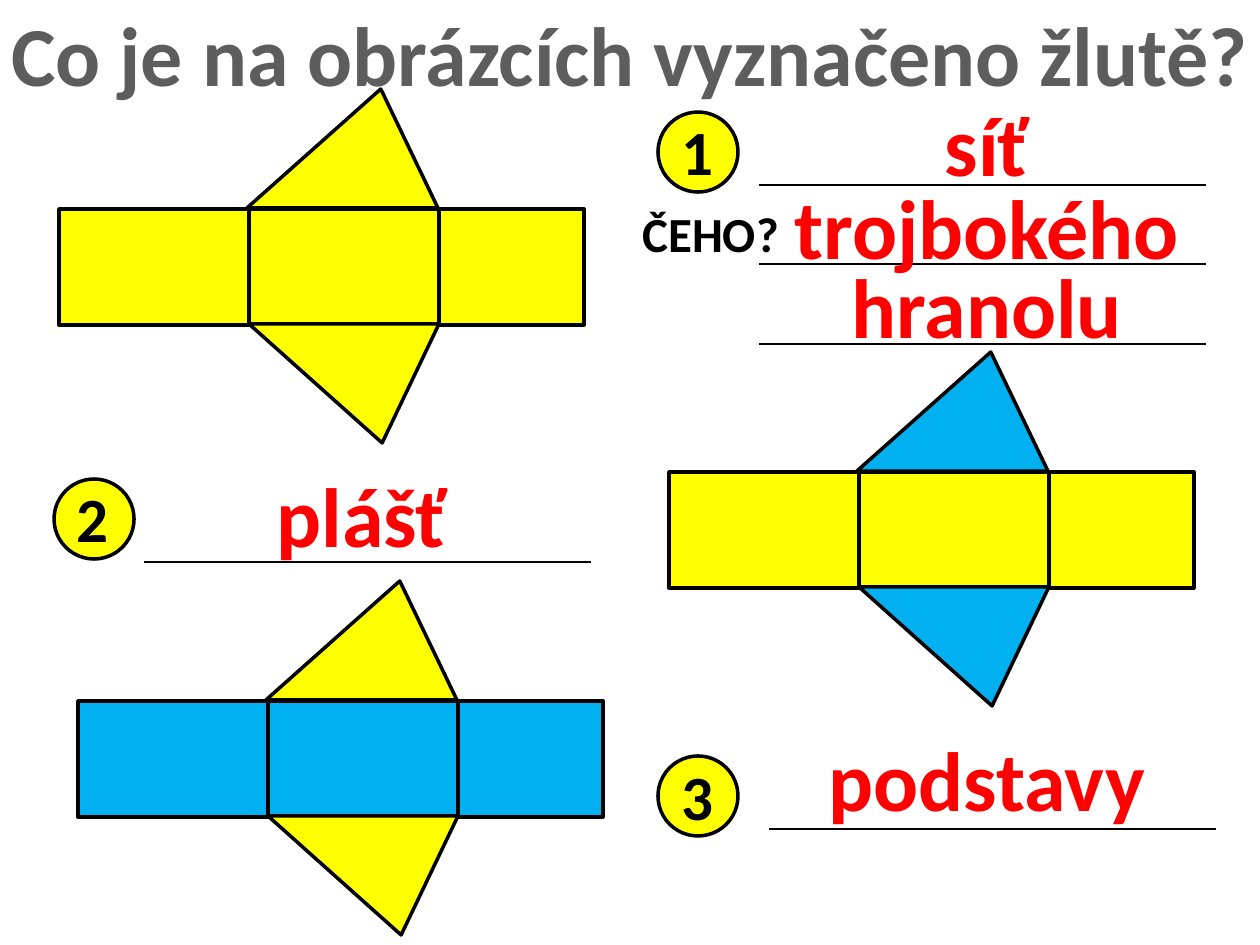
from lxml.etree import SubElement
from pptx import Presentation
from pptx.dml.color import RGBColor
from pptx.enum.shapes import MSO_CONNECTOR, MSO_SHAPE
from pptx.enum.text import MSO_AUTO_SIZE, PP_ALIGN
from pptx.oxml.ns import qn
from pptx.util import Emu, Pt

YELLOW = RGBColor(0xFF, 0xFF, 0x00)
BLUE = RGBColor(0x00, 0xB0, 0xF0)
RED = RGBColor(0xFF, 0x00, 0x00)
BLACK = RGBColor(0x00, 0x00, 0x00)
GREY = RGBColor(0x5D, 0x5D, 0x5D)

TITLE = "Co je na obrázcích vyznačeno žlutě?"
QUESTION = "ČEHO?"
NETS = [(59, 209, YELLOW, YELLOW), (669, 472, YELLOW, BLUE), (78, 701, BLUE, YELLOW)]
NET_SIDES = [(322, 203), (0, 266), (190, 190)]
SIDE_HEIGHT = 116
NET_BASES = [(188, -120, 191, False), (190, 115, 190, True)]
BASE_HEIGHT = 119
APEX = 0.701
NUMBERS = [("1", 658, 112, 669, 106), ("2", 54, 479, 64, 473), ("3", 658, 756, 669, 751)]
DISC = 80
ANSWER_LINES = [(759, 185), (759, 264), (759, 344), (144, 562), (769, 829)]
LINE_LENGTH = 447
ANSWERS = [("síť", 759, 86), ("trojbokého", 759, 169), ("hranolu", 759, 248),
           ("plášť", 134, 457), ("podstavy", 759, 721)]


def px(length):
    return Emu(round(length * 914400 / 126))


def add_text(page, text, left, top, width, height, *, size, color=BLACK,
             align=PP_ALIGN.LEFT, wrap=True):
    box = page.shapes.add_textbox(px(left), px(top), px(width), px(height))
    frame = box.text_frame
    frame.word_wrap = wrap
    frame.auto_size = MSO_AUTO_SIZE.SHAPE_TO_FIT_TEXT
    para = frame.paragraphs[0]
    para.alignment = align
    span = para.add_run()
    span.text = text
    span.font.name = "Calibri"
    span.font.size = Pt(size)
    span.font.bold = True
    span.font.color.rgb = color


def add_outlined(shapes, kind, left, top, width, height, color):
    shape = shapes.add_shape(kind, px(left), px(top), px(width), px(height))
    shape.shadow.inherit = False
    shape.fill.solid()
    shape.fill.fore_color.rgb = color
    shape.line.color.rgb = BLACK
    shape.line.width = Pt(2)
    return shape


def add_net(page, left, top, side_color, base_color):
    shapes = page.shapes.add_group_shape().shapes
    for x, width in NET_SIDES:
        add_outlined(shapes, MSO_SHAPE.RECTANGLE, left + x, top, width, SIDE_HEIGHT, side_color)
    for x, y, width, flipped in NET_BASES:
        base = add_outlined(shapes, MSO_SHAPE.ISOSCELES_TRIANGLE, left + x, top + y,
                            width, BASE_HEIGHT, base_color)
        base.adjustments[0] = APEX
        if flipped:
            base._element.spPr.xfrm.set("flipV", "1")


def add_answer_line(page, left, top):
    line = page.shapes.add_connector(MSO_CONNECTOR.STRAIGHT, px(left), px(top),
                                     px(left + LINE_LENGTH), px(top))
    line.line.color.rgb = BLACK
    line.line.width = Pt(1.5)
    SubElement(line._element.spPr, qn("a:effectLst"))


def main():
    """Build the slide on nets of a triangular prism."""
    deck = Presentation()
    deck.slide_width, deck.slide_height = px(1260), px(945)
    page = deck.slides.add_slide(deck.slide_layouts[6])
    add_text(page, TITLE, -8, -4, 1276, 115, size=48, color=GREY,
             align=PP_ALIGN.CENTER, wrap=False)
    for net in NETS:
        add_net(page, *net)
    for left, top in ANSWER_LINES:
        add_answer_line(page, left, top)
    for number, left, top, text_left, text_top in NUMBERS:
        add_outlined(page.shapes, MSO_SHAPE.OVAL, left, top, DISC, DISC, YELLOW)
        add_text(page, number, text_left, text_top, DISC, 89, size=36)
    for answer, left, top in ANSWERS:
        add_text(page, answer, left, top, 456, 115, size=48, color=RED, align=PP_ALIGN.CENTER)
    add_text(page, QUESTION, 630, 197, 164, 72, size=28, wrap=False)
    deck.save("out.pptx")


if __name__ == "__main__":
    main()
